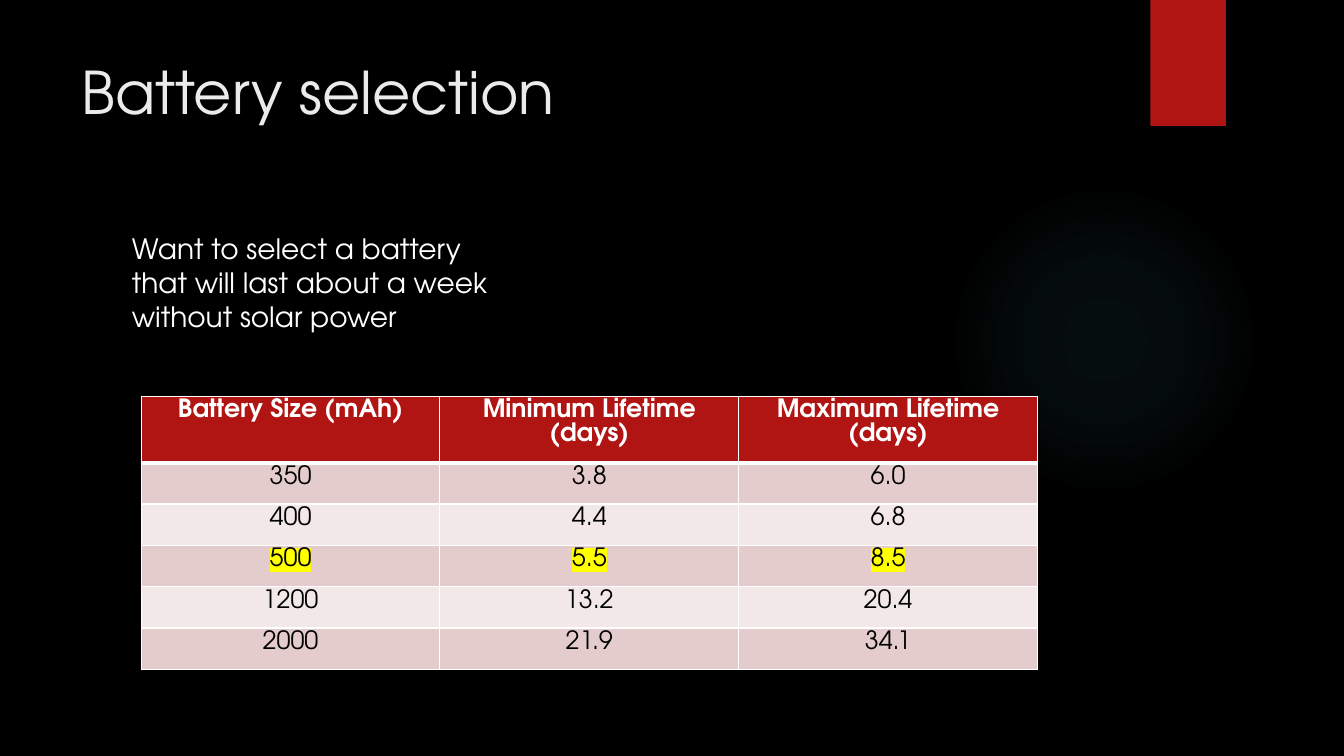
from typing import NamedTuple

from lxml import etree
from pptx import Presentation
from pptx.dml.color import RGBColor
from pptx.enum.shapes import MSO_SHAPE
from pptx.enum.text import MSO_ANCHOR, PP_ALIGN
from pptx.oxml import parse_xml
from pptx.oxml.ns import nsdecls, qn
from pptx.util import Inches, Pt

CENTER = PP_ALIGN.CENTER
TOP = MSO_ANCHOR.TOP
OVAL = MSO_SHAPE.OVAL
RECTANGLE = MSO_SHAPE.RECTANGLE

BLACK = RGBColor(0x00, 0x00, 0x00)
WHITE = RGBColor(0xFF, 0xFF, 0xFF)
TITLE_GRAY = RGBColor(0xEB, 0xEB, 0xEB)
RED = RGBColor(0xB0, 0x15, 0x13)
PINK = RGBColor(0xE4, 0xCC, 0xCC)
PALE_PINK = RGBColor(0xF2, 0xE8, 0xE7)
TEAL = RGBColor(0x50, 0xB9, 0xC1)
YELLOW = RGBColor(0xFF, 0xFF, 0x00)

FONT = "TeX Gyre Adventor"
HEADERS = ("Battery Size (mAh)", "Minimum Lifetime (days)", "Maximum Lifetime\n(days)")
BATTERIES = (
    ("350", "3.8", "6.0"),
    ("400", "4.4", "6.8"),
    ("500", "5.5", "8.5"),
    ("1200", "13.2", "20.4"),
    ("2000", "21.9", "34.1"),
)
SELECTED_SIZE = "500"
TABLE_WIDTH = 8.89
HEADER_HEIGHT = 0.56
ROW_HEIGHT = 0.41
GLOW_STOPS = ((0, 7), (36, 6), (69, 0))


class TextItem(NamedTuple):
    text: str
    left: float
    top: float
    width: float
    height: float
    size: int
    color: RGBColor


class CellStyle(NamedTuple):
    fill: RGBColor
    color: RGBColor
    bold: bool
    top_line: float
    bottom_line: float
    highlighted: bool


TEXTS = (
    TextItem("Battery selection", 0.71, 0.5, 10.29, 1.53, 42, TITLE_GRAY),
    TextItem("Want to select a battery that will last about a week without solar power",
             1.21, 2.25, 4.04, 4.59, 20, WHITE),
)


def add_glow(page) -> None:
    glow = page.shapes.add_shape(OVAL, Inches(9.41), Inches(1.83), Inches(3.08), Inches(3.08))
    glow.shadow.inherit = False
    glow.line.fill.background()
    stops = "".join(
        f'<a:gs pos="{position * 1000}"><a:srgbClr val="{TEAL}">'
        f'<a:alpha val="{opacity * 1000}"/></a:srgbClr></a:gs>'
        for position, opacity in GLOW_STOPS
    )
    gradient = parse_xml(
        f'<a:gradFill {nsdecls("a")}><a:gsLst>{stops}</a:gsLst><a:path path="circle">'
        '<a:fillToRect l="50000" t="50000" r="50000" b="50000"/></a:path></a:gradFill>'
    )
    glow.element.spPr.find(qn("a:prstGeom")).addnext(gradient)


def add_ribbon(page) -> None:
    ribbon = page.shapes.add_shape(RECTANGLE, Inches(11.41), 0, Inches(0.75), Inches(1.25))
    ribbon.shadow.inherit = False
    ribbon.fill.solid()
    ribbon.fill.fore_color.rgb = RED
    ribbon.line.fill.background()


def set_font(para, size: int, color: RGBColor, bold: bool = False) -> None:
    para.font.name = FONT
    para.font.size = Pt(size)
    para.font.bold = bold
    para.font.color.rgb = color


def add_text(page, item: TextItem) -> None:
    box = page.shapes.add_textbox(
        Inches(item.left), Inches(item.top), Inches(item.width), Inches(item.height))
    frame = box.text_frame
    frame.word_wrap = True
    frame.vertical_anchor = TOP
    frame.text = item.text
    set_font(frame.paragraphs[0], item.size, item.color)


def add_border(cell, side: str, width: float) -> None:
    line = parse_xml(
        f'<a:{side} {nsdecls("a")} w="{Pt(width)}"><a:solidFill>'
        f'<a:srgbClr val="{WHITE}"/></a:solidFill></a:{side}>'
    )
    cell.fill._xPr.append(line)


def highlight(span) -> None:
    marker = etree.SubElement(span.font._element, qn("a:highlight"))
    etree.SubElement(marker, qn("a:srgbClr")).set("val", str(YELLOW))


def fill_cell(cell, text: str, style: CellStyle) -> None:
    cell.text = text
    cell.vertical_anchor = TOP
    cell.margin_top = cell.margin_bottom = Inches(0.03)
    for side, width in (("lnL", 1), ("lnR", 1), ("lnT", style.top_line), ("lnB", style.bottom_line)):
        add_border(cell, side, width)
    cell.fill.solid()
    cell.fill.fore_color.rgb = style.fill
    for para in cell.text_frame.paragraphs:
        para.alignment = CENTER
        para.line_spacing = 1.0
        set_font(para, 18, style.color, style.bold)
        if style.highlighted:
            highlight(para.runs[0])


def add_battery_table(page) -> None:
    rows = (HEADERS, *BATTERIES)
    table = page.shapes.add_table(
        len(rows), len(HEADERS), Inches(1.4), Inches(3.93), Inches(TABLE_WIDTH),
        Inches(HEADER_HEIGHT + ROW_HEIGHT * len(BATTERIES)),
    ).table
    for column in table.columns:
        column.width = Inches(TABLE_WIDTH / len(HEADERS))
    for index, values in enumerate(rows):
        if index == 0:
            style = CellStyle(RED, WHITE, True, 1, 3, False)
        else:
            style = CellStyle(PINK if index % 2 else PALE_PINK, BLACK, False,
                              3 if index == 1 else 1, 1, values[0] == SELECTED_SIZE)
        table.rows[index].height = Inches(ROW_HEIGHT if index else HEADER_HEIGHT)
        for column, text in enumerate(values):
            fill_cell(table.cell(index, column), text, style)


def main() -> None:
    deck = Presentation()
    deck.slide_width = Inches(13.33)
    deck.slide_height = Inches(7.5)
    page = deck.slides.add_slide(deck.slide_layouts[6])
    page.background.fill.solid()
    page.background.fill.fore_color.rgb = BLACK
    add_glow(page)
    add_ribbon(page)
    for item in TEXTS:
        add_text(page, item)
    add_battery_table(page)
    deck.save("out.pptx")


if __name__ == "__main__":
    main()
